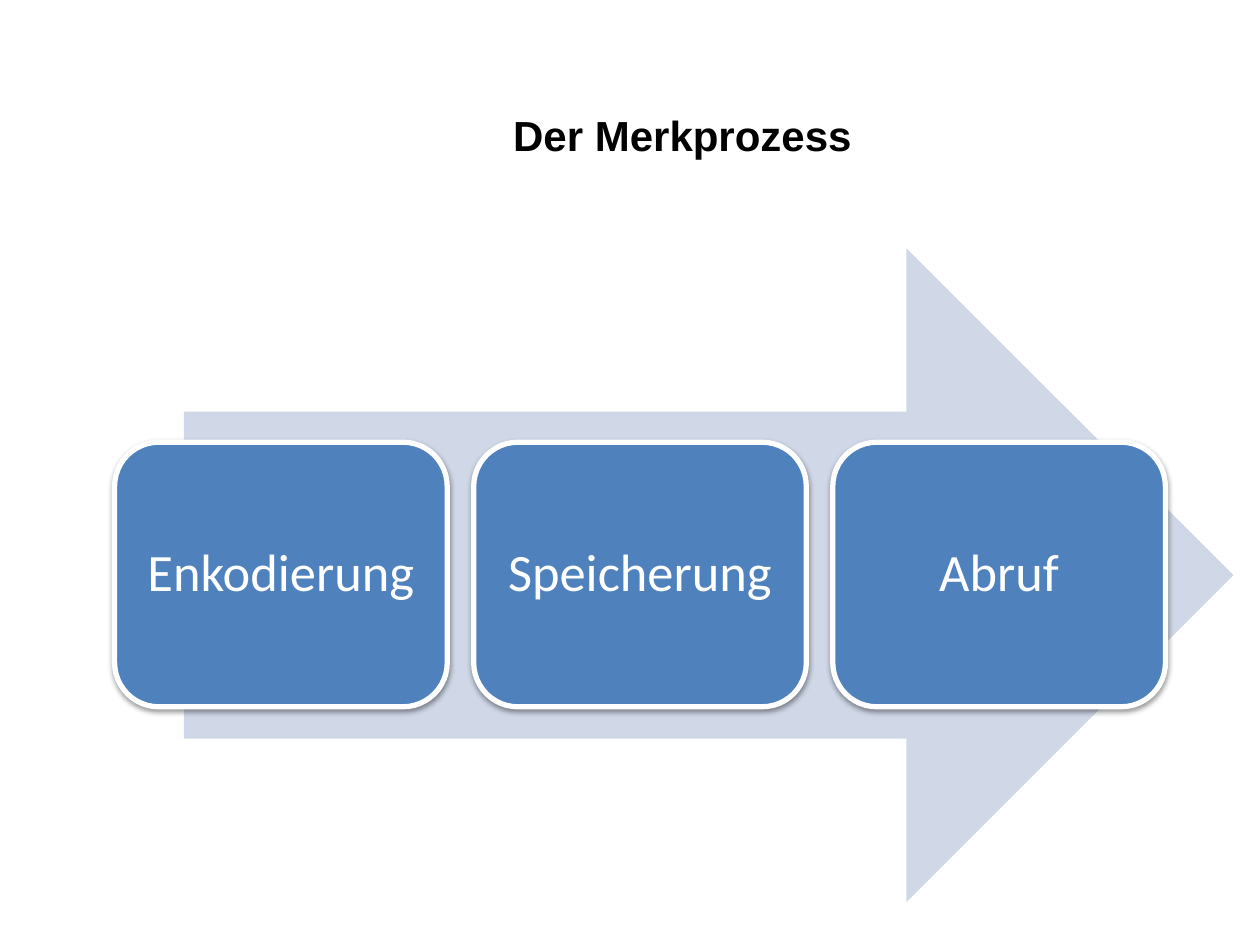
"""Build the memory process slide: a title and three stages on a large arrow."""
from dataclasses import dataclass

from pptx import Presentation
from pptx import oxml
from pptx import util as u
from pptx.dml.color import RGBColor
from pptx.enum import shapes, text
from pptx.oxml import ns

WHITE = RGBColor(0xFF, 0xFF, 0xFF)
BLACK = RGBColor(0x00, 0x00, 0x00)
BLUE = RGBColor(0x4F, 0x81, 0xBD)
PALE_BLUE = RGBColor(0xD0, 0xD8, 0xE8)

STAGE_LEFT, STAGE_TOP = 0.91, 3.51
STAGE_WIDTH, STAGE_HEIGHT = 2.64, 2.1
STAGE_PITCH = 2.85
STAGE_INSET = u.Inches(0.12)

SHADOW = (
    f'<a:effectLst {ns.nsdecls("a")}>'
    '<a:outerShdw blurRad="40000" dist="20000" dir="5400000" rotWithShape="0">'
    '<a:srgbClr val="000000"><a:alpha val="38000"/></a:srgbClr>'
    '</a:outerShdw></a:effectLst>'
)


@dataclass(frozen=True)
class Stage:
    label: str
    left: float


STAGES = [
    Stage(label, STAGE_LEFT + i * STAGE_PITCH)
    for i, label in enumerate(("Enkodierung", "Speicherung", "Abruf"))
]


def add_run(p, label: str, font: str, size: float, color: RGBColor, bold: bool = False) -> None:
    p.alignment = text.PP_ALIGN.CENTER
    r = p.add_run()
    r.text = label
    r.font.name = font
    r.font.size = u.Pt(size)
    r.font.bold = bold
    r.font.color.rgb = color


def add_title(s, label: str) -> None:
    sp = s.shapes.add_textbox(u.Inches(2.64), u.Inches(0.82), u.Inches(5.55), u.Inches(0.5))
    tf = sp.text_frame
    tf.word_wrap = True
    tf.auto_size = text.MSO_AUTO_SIZE.SHAPE_TO_FIT_TEXT
    add_run(tf.paragraphs[0], label, "Arial", 24, BLACK, bold=True)


def add_arrow(s) -> None:
    sp = s.shapes.add_shape(
        shapes.MSO_SHAPE.RIGHT_ARROW,
        u.Inches(1.46), u.Inches(1.97), u.Inches(8.33), u.Inches(5.19),
    )
    sp.shadow.inherit = False
    sp.fill.solid()
    sp.fill.fore_color.rgb = PALE_BLUE
    sp.line.fill.background()


def add_stage(s, stage: Stage) -> None:
    sp = s.shapes.add_shape(
        shapes.MSO_SHAPE.ROUNDED_RECTANGLE,
        u.Inches(stage.left), u.Inches(STAGE_TOP),
        u.Inches(STAGE_WIDTH), u.Inches(STAGE_HEIGHT),
    )
    sp.fill.solid()
    sp.fill.fore_color.rgb = BLUE
    sp.line.color.rgb = WHITE
    sp.line.width = u.Pt(3)
    sp.element.spPr.append(oxml.parse_xml(SHADOW))

    tf = sp.text_frame
    tf.word_wrap = True
    tf.vertical_anchor = text.MSO_ANCHOR.MIDDLE
    tf.margin_left = tf.margin_right = tf.margin_top = tf.margin_bottom = STAGE_INSET
    p = tf.paragraphs[0]
    p.line_spacing = 0.9
    add_run(p, stage.label, "Calibri", 30, WHITE)


def main() -> None:
    prs = Presentation()
    prs.slide_width, prs.slide_height = u.Inches(10), u.Inches(7.5)
    s = prs.slides.add_slide(prs.slide_layouts[6])
    add_arrow(s)
    for stage in STAGES:
        add_stage(s, stage)
    add_title(s, "Der Merkprozess")
    prs.save("out.pptx")


if __name__ == "__main__":
    main()
